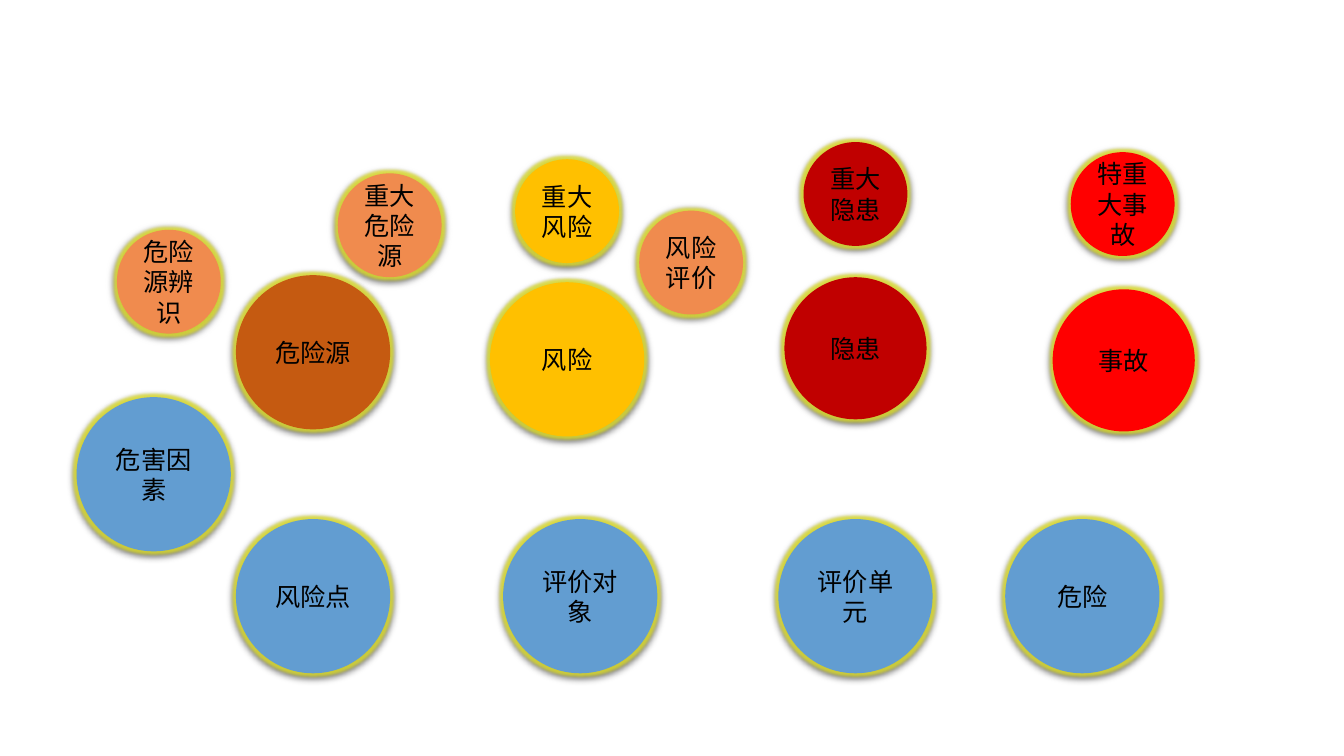
from dataclasses import dataclass

from lxml.etree import SubElement
from pptx import Presentation
from pptx.dml.color import RGBColor
from pptx.enum.shapes import MSO_SHAPE
from pptx.enum.text import MSO_ANCHOR, PP_ALIGN
from pptx.oxml.ns import qn
from pptx.shapes.autoshape import Shape
from pptx.slide import Slide
from pptx.util import Inches, Pt

COLORS = {
    "brown": "C55A11",
    "orange": "F08B4E",
    "amber": "FFC000",
    "crimson": "C00000",
    "red": "FF0000",
    "blue": "629DD1",
    "text": "000000",
    "shadow": "000000",
    "glow": "E4E430",
}
LARGE, MEDIUM, SMALL = 1.53, 1.41, 1.03
BOTTOM_ROW = 5.15


@dataclass(frozen=True)
class Circle:
    label: str
    left: float
    top: float
    size: float
    color: str


CIRCLES = [
    Circle("危险源", 2.34, 2.73, LARGE, "brown"),
    Circle("风险", 4.86, 2.8, LARGE, "amber"),
    Circle("隐患", 7.78, 2.75, MEDIUM, "crimson"),
    Circle("风险点", 2.34, BOTTOM_ROW, LARGE, "blue"),
    Circle("重大危险源", 3.35, 1.72, SMALL, "orange"),
    Circle("重大风险", 5.11, 1.58, SMALL, "amber"),
    Circle("重大隐患", 7.97, 1.41, SMALL, "crimson"),
    Circle("事故", 10.44, 2.87, MEDIUM, "red"),
    Circle("特重大事故", 10.62, 1.51, SMALL, "red"),
    Circle("评价对象", 4.99, BOTTOM_ROW, LARGE, "blue"),
    Circle("评价单元", 7.72, BOTTOM_ROW, LARGE, "blue"),
    Circle("危险", 9.97, BOTTOM_ROW, LARGE, "blue"),
    Circle("危害因素", 0.76, 3.94, LARGE, "blue"),
    Circle("危险源辨识", 1.16, 2.28, SMALL, "orange"),
    Circle("风险评价", 6.34, 2.09, SMALL, "orange"),
]


def add_effect(shape: Shape, kind: str, color: str, opacity: int, **settings: str) -> None:
    effects = shape.element.spPr.find(qn("a:effectLst"))
    effect = SubElement(effects, qn(f"a:{kind}"), settings)
    tint = SubElement(effect, qn("a:srgbClr"), val=COLORS[color])
    SubElement(tint, qn("a:alpha"), val=str(opacity * 1000))


def draw_circle(page: Slide, circle: Circle) -> None:
    shape = page.shapes.add_shape(
        MSO_SHAPE.OVAL,
        Inches(circle.left),
        Inches(circle.top),
        Inches(circle.size),
        Inches(circle.size),
    )
    shape.fill.solid()
    shape.fill.fore_color.rgb = RGBColor.from_string(COLORS[circle.color])
    shape.line.fill.background()
    shape.shadow.inherit = False
    add_effect(shape, "glow", "glow", 80, rad=str(Pt(4)))
    add_effect(
        shape, "outerShdw", "shadow", 63,
        blurRad=str(Pt(4.5)), dist=str(Pt(1.5)), dir="5400000", rotWithShape="0",
    )

    frame = shape.text_frame
    frame.word_wrap = True
    frame.vertical_anchor = MSO_ANCHOR.MIDDLE
    paragraph = frame.paragraphs[0]
    paragraph.text = circle.label
    paragraph.alignment = PP_ALIGN.CENTER
    paragraph.font.name = "Arial"
    paragraph.font.size = Pt(18)
    paragraph.font.color.rgb = RGBColor.from_string(COLORS["text"])


def main() -> None:
    deck = Presentation()
    deck.slide_width = Inches(13.33)
    deck.slide_height = Inches(7.5)
    page = deck.slides.add_slide(deck.slide_layouts[6])
    for circle in CIRCLES:
        draw_circle(page, circle)
    deck.save("out.pptx")


if __name__ == "__main__":
    main()
